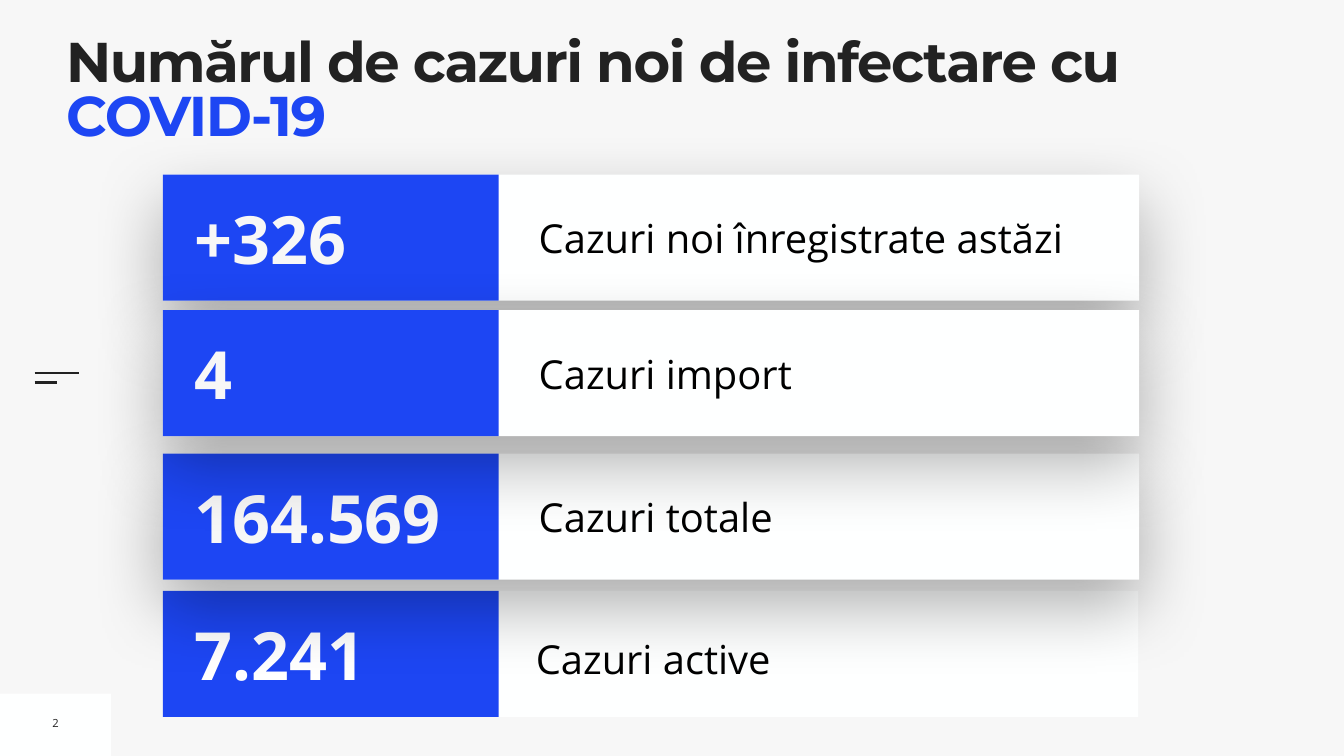
from lxml import etree
from pptx import Presentation
from pptx.dml.color import RGBColor
from pptx.enum import shapes, text
from pptx.oxml import parse_xml
from pptx.oxml.ns import nsdecls, qn
from pptx.util import Pt

COLORS = {"background": "F7F7F7", "card": "FEFFFF", "blue": "1D46F3", "dark": "222222",
          "black": "000000", "white": "FFFFFF", "pale": "F7F7F7"}
SHADOW = f"""<a:effectLst {nsdecls("a")}>
  <a:outerShdw blurRad="{Pt(100)}" dist="{Pt(40)}" dir="5400000" algn="ctr" rotWithShape="0">
    <a:srgbClr val="{COLORS['black']}"><a:alpha val="30000"/></a:srgbClr>
  </a:outerShdw>
</a:effectLst>"""


def add_text(parent, words, left, top, width, height, *, size, color, bold=False,
             align=text.PP_ALIGN.LEFT, inset=7.2, line_spacing=None, space_before=0, wrap=True):
    box = parent.shapes.add_textbox(Pt(left), Pt(top), Pt(width), Pt(height))
    frame = box.text_frame
    frame.word_wrap = wrap
    frame.vertical_anchor = text.MSO_ANCHOR.MIDDLE
    frame.margin_left = frame.margin_right = Pt(inset)
    frame.margin_top = frame.margin_bottom = Pt(inset)
    para = frame.paragraphs[0]
    para.alignment = align
    para.line_spacing = line_spacing
    para.space_before = Pt(space_before)
    span = para.add_run()
    span.text = words
    span.font.name, span.font.size, span.font.bold = "Open Sans", Pt(size), bold
    span.font.color.rgb = RGBColor.from_string(COLORS[color])


def add_panel(parent, left, top, width, height, color):
    panel = parent.shapes.add_shape(shapes.MSO_SHAPE.RECTANGLE, Pt(left), Pt(top),
                                    Pt(width), Pt(height))
    panel.shadow.inherit = False
    panel.fill.solid()
    panel.fill.fore_color.rgb = RGBColor.from_string(COLORS[color])
    panel.line.fill.background()
    return panel


deck = Presentation()
deck.slide_width, deck.slide_height = Pt(1920), Pt(1080)
page = deck.slides.add_slide(deck.slide_layouts[5])
page.background.fill.solid()
page.background.fill.fore_color.rgb = RGBColor.from_string(COLORS["background"])

# Page number and side mark
add_panel(page, 0, 991, 158.5, 89, "card")
add_text(page, "2", 67, 1014.5, 24.5, 36.5, size=16, color="dark",
         align=text.PP_ALIGN.CENTER, wrap=False)
for y, right in ((533.5, 113), (546.5, 81.5)):
    mark = page.shapes.add_connector(shapes.MSO_CONNECTOR.STRAIGHT,
                                     Pt(49.5), Pt(y), Pt(right), Pt(y))
    mark.line.color.rgb = RGBColor.from_string(COLORS["dark"])
    mark.line.width = Pt(3)
    etree.SubElement(mark._element.spPr, qn("a:effectLst"))

# Title
title = page.shapes.title
title.left, title.top, title.width, title.height = Pt(94.3), Pt(56.2), Pt(1723.7), Pt(113.8)
frame = title.text_frame
frame.word_wrap = True
frame.auto_size = text.MSO_AUTO_SIZE.NONE
frame.vertical_anchor = text.MSO_ANCHOR.TOP
frame.margin_left = frame.margin_right = frame.margin_top = frame.margin_bottom = 0
para = frame.paragraphs[0]
para.alignment = text.PP_ALIGN.LEFT
para.line_spacing = 0.8
for words, color in (("Numărul de cazuri noi de infectare cu ", "dark"), ("COVID-19", "blue")):
    span = para.add_run()
    span.text = words
    span.font.name, span.font.size, span.font.bold = "Montserrat", Pt(80), True
    span.font.color.rgb = RGBColor.from_string(COLORS[color])
    span.font._element.set("spc", "-200")

# Case rows from back to front; the last row of the page has no shadow
rows = [
    (844, "7.241", "Cazuri active", False),
    (648, "164.569", "Cazuri totale", True),
    (249.5, "+326", "Cazuri noi înregistrate astăzi", True),
    (443, "4", "Cazuri import", True),
]
for top, count, label, shadowed in rows:
    row = page.shapes.add_group_shape()
    card = add_panel(row, 232.8, top, 1394.4 if shadowed else 1393.2, 180, "card")
    if shadowed:
        properties = card._element.spPr
        properties.replace(properties.find(qn("a:effectLst")), parse_xml(SHADOW))
        add_text(row, label, 762.5, top + 48.2, 846.7, 83.5, size=57, color="black")
    else:
        add_text(row, label, 765.4, top + 41.8, 833.8, 90, size=57, color="black",
                 inset=0, line_spacing=1.3, space_before=20)
    add_panel(row, 232.8, top, 479.5, 180, "blue")
    add_text(row, count, 270.7, top + 25, 434.2, 129.6, size=95, bold=True,
             color="pale" if shadowed else "white")

deck.save("out.pptx")
